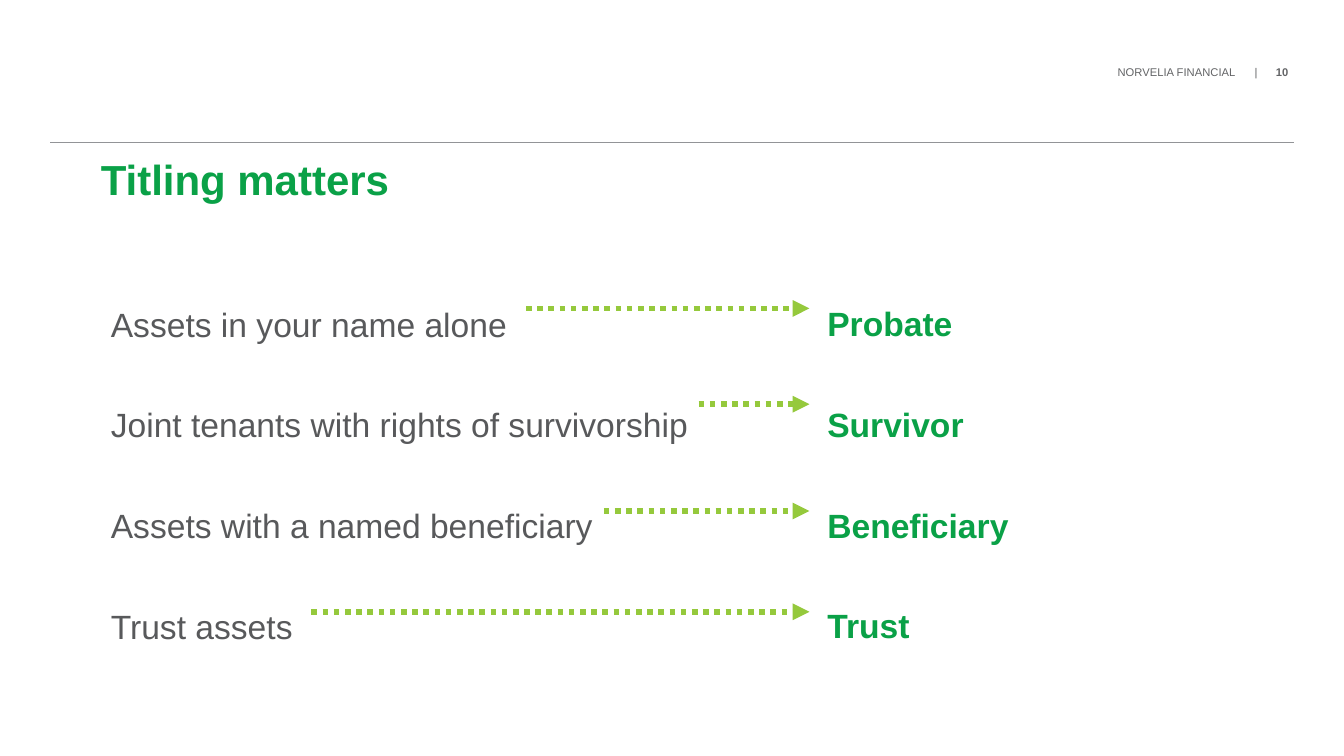
from lxml import etree
from pptx import Presentation
from pptx.dml.color import RGBColor
from pptx.enum import dml, shapes, text
from pptx.oxml import ns
from pptx.util import Pt

COLORS = {"green": "0AA147", "lime": "95C93C", "body": "58595B",
          "header": "636466", "rule": "929497"}
FONT = "Arial"

# Holding, outcome, arrow start and arrow height within the chart box
OUTCOMES = [
    ("Assets in your name alone", "Probate", 303.8, 50.3),
    ("Joint tenants with rights of survivorship", "Survivor", 427, 118.7),
    ("Assets with a named beneficiary", "Beneficiary", 359.3, 195),
    ("Trust assets", "Trust", 150.5, 267),
]


def rgb(name):
    return RGBColor.from_string(COLORS[name])


def style(paragraph, size, color, bold=False):
    for run in paragraph.runs:
        run.font.name = FONT
        run.font.size = Pt(size)
        run.font.bold = bold
        run.font.color.rgb = rgb(color)


def clear_insets(frame):
    frame.margin_left = frame.margin_right = 0
    frame.margin_top = frame.margin_bottom = 0


def add_line(slide, start, end, color, width):
    line = slide.shapes.add_connector(
        shapes.MSO_CONNECTOR.STRAIGHT, *(Pt(value) for value in start + end))
    line.line.color.rgb = rgb(color)
    line.line.width = Pt(width)
    etree.SubElement(line._element.spPr, ns.qn("a:effectLst"))
    return line


def add_header(slide, left, top, width, height):
    # Owner, divider and page number on tab stops
    label = slide.shapes.add_textbox(
        Pt(left + width - 126.2), Pt(top), Pt(122.6), Pt(11))
    frame = label.text_frame
    clear_insets(frame)
    frame.margin_top = Pt(0.7)
    frame.word_wrap = True
    paragraph = frame.paragraphs[0]
    paragraph.text = "NORVELIA FINANCIAL\t|\t"
    page_number = paragraph.add_run()
    page_number.text = "10"
    tabs = etree.SubElement(paragraph._p.get_or_add_pPr(), ns.qn("a:tabLst"))
    for position in (97.9, 113):
        etree.SubElement(tabs, ns.qn("a:tab"), pos=str(Pt(position)), algn="l")
    style(paragraph, 8, "header")
    page_number.font.bold = True

    # Rule under the header
    bottom = top + height
    add_line(slide, (left, bottom), (left + width, bottom), "rule", 0.5)


def add_title(slide, left, top, width, height):
    title = slide.shapes.title
    title.left, title.top = Pt(left), Pt(top)
    title.width, title.height = Pt(width), Pt(height)
    frame = title.text_frame
    clear_insets(frame)
    frame.word_wrap = True
    frame.vertical_anchor = text.MSO_ANCHOR.TOP
    frame.text = "Titling matters"
    paragraph = frame.paragraphs[0]
    paragraph.alignment = text.PP_ALIGN.LEFT
    paragraph.line_spacing = Pt(32)
    style(paragraph, 30, "green", bold=True)


def add_column(slide, left, top, width, height, entries, color, bold):
    column = slide.shapes.add_textbox(Pt(left), Pt(top), Pt(width), Pt(height))
    frame = column.text_frame
    clear_insets(frame)
    frame.word_wrap = True
    frame.text = "\n".join(entries)
    for paragraph in frame.paragraphs:
        paragraph.line_spacing = 2.5
        style(paragraph, 24, color, bold)


def add_outcomes(slide, left, top, width, height):
    holdings, results, starts, heights = zip(*OUTCOMES)
    # Holdings on the left, what decides them on the right
    add_column(slide, left + 7.2, top + 3.6, 472.3, height, holdings, "body", False)
    add_column(slide, left + 519, top + 3.2, width - 519, height, results, "green", True)

    # Dotted arrows ending on one common edge
    for start, y in zip(starts, heights):
        arrow = add_line(slide, (left + start, top + y), (left + 506.2, top + y),
                         "lime", 4)
        arrow.line.dash_style = dml.MSO_LINE.ROUND_DOT
        etree.SubElement(arrow.line._get_or_add_ln(), ns.qn("a:tailEnd"),
                         type="triangle")


def main():
    deck = Presentation()
    deck.slide_width, deck.slide_height = Pt(960), Pt(540)
    slide = deck.slides.add_slide(deck.slide_layouts[5])
    add_header(slide, 36, 46, 888.5, 56)
    add_title(slide, 72, 113.8, 840, 75.6)
    add_outcomes(slide, 72, 170, 888, 285)
    deck.save("out.pptx")


if __name__ == "__main__":
    main()
